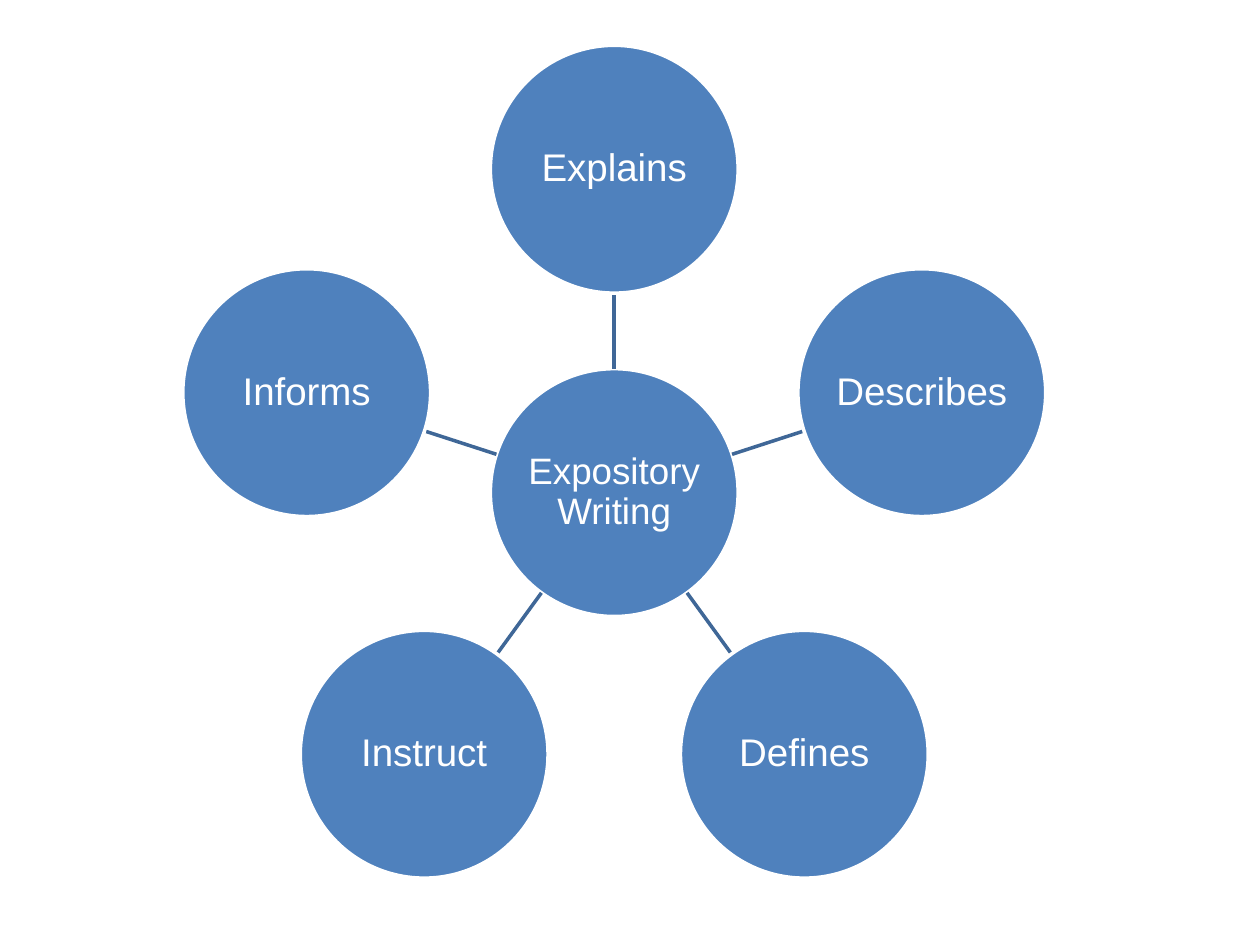
"""Build a hub-and-spoke slide on the purposes of expository writing."""
from dataclasses import dataclass
from math import cos, radians, sin

from lxml.etree import SubElement
from pptx import Presentation
from pptx.dml.color import RGBColor as RGB
from pptx.enum.shapes import MSO_CONNECTOR as CONNECTOR, MSO_SHAPE as SHAPE
from pptx.enum.text import MSO_ANCHOR as ANCHOR, PP_ALIGN as ALIGN
from pptx.oxml.ns import qn
from pptx.util import Pt

HUB = "Expository Writing"
PURPOSES = ["Explains", "Describes", "Defines", "Instruct", "Informs"]


@dataclass(frozen=True)
class Theme:
    font: str = "Arial"
    circle: RGB = RGB(0x4F, 0x81, 0xBD)
    spoke: RGB = RGB(0x3F, 0x67, 0x97)
    white: RGB = RGB(0xFF, 0xFF, 0xFF)
    hub_size: float = 21
    purpose_size: float = 22
    line: float = 2


THEME = Theme()
SLIDE_W, SLIDE_H = 720, 540
CENTER_X, CENTER_Y = 351, 281.5
RADIUS = 70.8
ORBIT = 184.8


def polar(distance, angle):
    return CENTER_X + distance * sin(angle), CENTER_Y - distance * cos(angle)


def write(tf, text, *, size, color, inset):
    tf.word_wrap = True
    tf.vertical_anchor = ANCHOR.MIDDLE
    tf.margin_left = tf.margin_right = tf.margin_top = tf.margin_bottom = Pt(inset)
    p = tf.paragraphs[0]
    p.alignment = ALIGN.CENTER
    p.line_spacing = 0.9
    r = p.add_run()
    r.text = text
    r.font.name = THEME.font
    r.font.size = Pt(size)
    r.font.color.rgb = color


def add_circle(s, text, x, y, size):
    sp = s.shapes.add_shape(SHAPE.OVAL, Pt(x - RADIUS), Pt(y - RADIUS),
                            Pt(2 * RADIUS), Pt(2 * RADIUS))
    sp.shadow.inherit = False
    sp.fill.solid()
    sp.fill.fore_color.rgb = THEME.circle
    sp.line.color.rgb = THEME.white
    sp.line.width = Pt(THEME.line)
    write(sp.text_frame, text, size=size, color=THEME.white, inset=0.5)


def add_spoke(s, angle):
    ends = (*polar(RADIUS, angle), *polar(ORBIT - RADIUS, angle))
    line = s.shapes.add_connector(CONNECTOR.STRAIGHT, *map(Pt, ends))
    line.line.color.rgb = THEME.spoke
    line.line.width = Pt(THEME.line)
    SubElement(line._element.spPr, qn("a:effectLst"))


def main():
    prs = Presentation()
    prs.slide_width, prs.slide_height = Pt(SLIDE_W), Pt(SLIDE_H)
    s = prs.slides.add_slide(prs.slide_layouts[6])
    add_circle(s, HUB, CENTER_X, CENTER_Y, THEME.hub_size)
    for i, purpose in enumerate(PURPOSES):
        angle = radians(360 / len(PURPOSES) * i)
        add_spoke(s, angle)
        add_circle(s, purpose, *polar(ORBIT, angle), THEME.purpose_size)
    prs.save("out.pptx")


if __name__ == "__main__":
    main()
